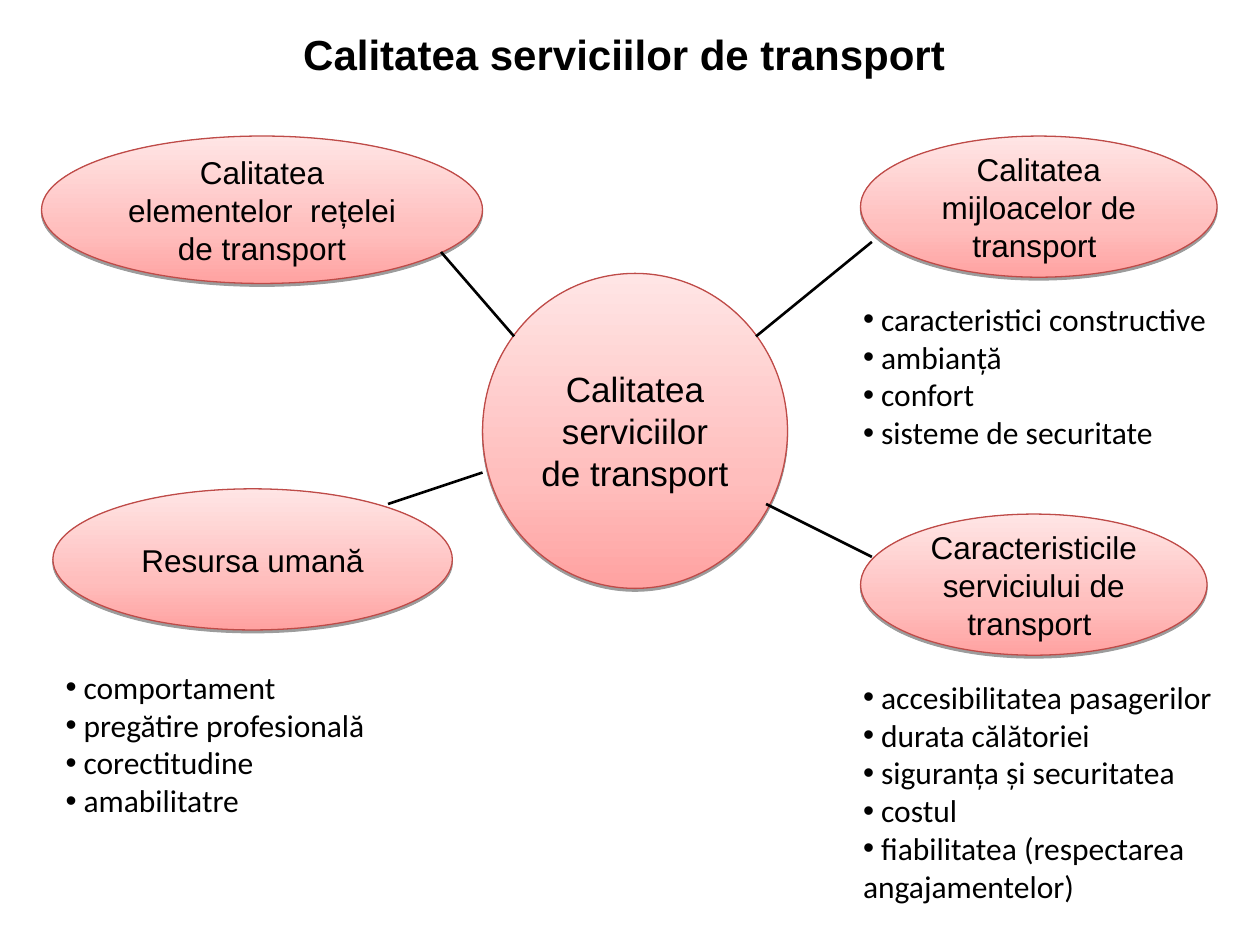
from lxml import etree
from pptx import Presentation
from pptx.dml.color import RGBColor
from pptx.enum.shapes import MSO_CONNECTOR, MSO_SHAPE
from pptx.enum.text import MSO_ANCHOR, MSO_AUTO_SIZE, PP_ALIGN
from pptx.oxml.ns import qn
from pptx.util import Inches, Pt

OVAL = MSO_SHAPE.OVAL
STRAIGHT = MSO_CONNECTOR.STRAIGHT
TOP, MIDDLE = MSO_ANCHOR.TOP, MSO_ANCHOR.MIDDLE
LEFT, CENTER = PP_ALIGN.LEFT, PP_ALIGN.CENTER
NO_FIT = MSO_AUTO_SIZE.NONE

BLACK = RGBColor(0x00, 0x00, 0x00)
RED = RGBColor(0xBE, 0x4B, 0x48)
GRADIENT = [(0, RGBColor(0xFF, 0xA2, 0xA1)),
            (35, RGBColor(0xFF, 0xBE, 0xBD)),
            (100, RGBColor(0xFF, 0xE5, 0xE5))]


def write(sp, lines, size=18, font="Arial", bold=False, align=CENTER, anchor=MIDDLE, bullet=None):
    tf = sp.text_frame
    tf.word_wrap = True
    tf.auto_size = NO_FIT
    tf.vertical_anchor = anchor
    for i, line in enumerate(lines):
        p = tf.add_paragraph() if i else tf.paragraphs[0]
        p.alignment = align
        p.space_before = Pt(0)
        r = p.add_run()
        r.text = line
        r.font.name, r.font.size, r.font.bold = font, Pt(size), bold
        r.font.color.rgb = BLACK
        if bullet:
            pPr = p._p.get_or_add_pPr()
            pPr.set("marL", "0")
            pPr.set("indent", "0")
            etree.SubElement(pPr, qn("a:buFont"), typeface="Arial")
            etree.SubElement(pPr, qn("a:buChar"), char=bullet)


def place(sp, x, y, w, h):
    sp.left, sp.top, sp.width, sp.height = Inches(x), Inches(y), Inches(w), Inches(h)


prs = Presentation()
prs.slide_width, prs.slide_height = Inches(10), Inches(7.5)
s = prs.slides.add_slide(prs.slide_layouts.get_by_name("Comparison"))

place(s.shapes.title, 0, 0.17, 10, 0.51)
write(s.shapes.title, ["Calitatea serviciilor de transport "], size=24, bold=True)

ovals = [
    ("Calitatea elementelor  rețelei de transport", 18, 0.33, 1.08, 3.5, 1.17),
    ("Resursa umană", 18, 0.42, 3.88, 3.17, 1.12),
    ("Caracteristicile serviciului de transport ", 18, 6.83, 4.08, 2.75, 1.12),
    ("Calitatea mijloacelor de transport ", 18, 6.83, 1.08, 2.83, 1.12),
    ("Calitatea serviciilor de transport", 20, 3.83, 2.17, 2.42, 2.5),
]
for text, size, x, y, w, h in ovals:
    sp = s.shapes.add_shape(OVAL, Inches(x), Inches(y), Inches(w), Inches(h))
    sp.fill.gradient()
    sp.fill.gradient_angle = 90
    stops = sp._element.spPr.find(".//" + qn("a:gsLst"))
    stops.clear()
    for pos, color in GRADIENT:
        gs = etree.SubElement(stops, qn("a:gs"), pos=str(pos * 1000))
        etree.SubElement(gs, qn("a:srgbClr"), val=str(color))
    sp.line.color.rgb = RED
    sp.line.width = Pt(0.75)
    sp.shadow.inherit = False
    effects = sp._element.spPr.find(qn("a:effectLst"))
    shadow = etree.SubElement(effects, qn("a:outerShdw"), blurRad="0", dist=str(Pt(1.6)),
                              dir="5400000", rotWithShape="0")
    color = etree.SubElement(shadow, qn("a:srgbClr"), val=str(BLACK))
    etree.SubElement(color, qn("a:alpha"), val="38000")
    write(sp, [text], size=size)

links = [(3.5, 2, 4.08, 2.67), (3.08, 4, 3.83, 3.75), (6.08, 4, 6.92, 4.42), (6, 2.67, 6.92, 1.92)]
for x1, y1, x2, y2 in links:
    c = s.shapes.add_connector(STRAIGHT, Inches(x1), Inches(y1), Inches(x2), Inches(y2))
    c.line.color.rgb = BLACK
    c.line.width = Pt(1.5)
    etree.SubElement(c._element.spPr, qn("a:effectLst"))

lists = [
    ((6.75, 2.33, 3.25, 1.31),
     [" caracteristici constructive", " ambianță", " confort", " sisteme de securitate"]),
    ((0.42, 5.25, 2.58, 1.31),
     [" comportament", " pregătire profesională", " corectitudine", " amabilitatre"]),
    ((6.75, 5.33, 3, 1.92),
     [" accesibilitatea pasagerilor", " durata călătoriei", " siguranța și securitatea", " costul",
      " fiabilitatea (respectarea angajamentelor)"]),
]
bodies = [sp for sp in s.placeholders if sp.placeholder_format.idx in (1, 2, 3, 4)]
for sp, (box, items) in zip(bodies, lists):
    place(sp, *box)
    write(sp, items, font="Calibri", align=LEFT, anchor=TOP, bullet="•")
unused = bodies[-1]._element
unused.getparent().remove(unused)

prs.save("out.pptx")
